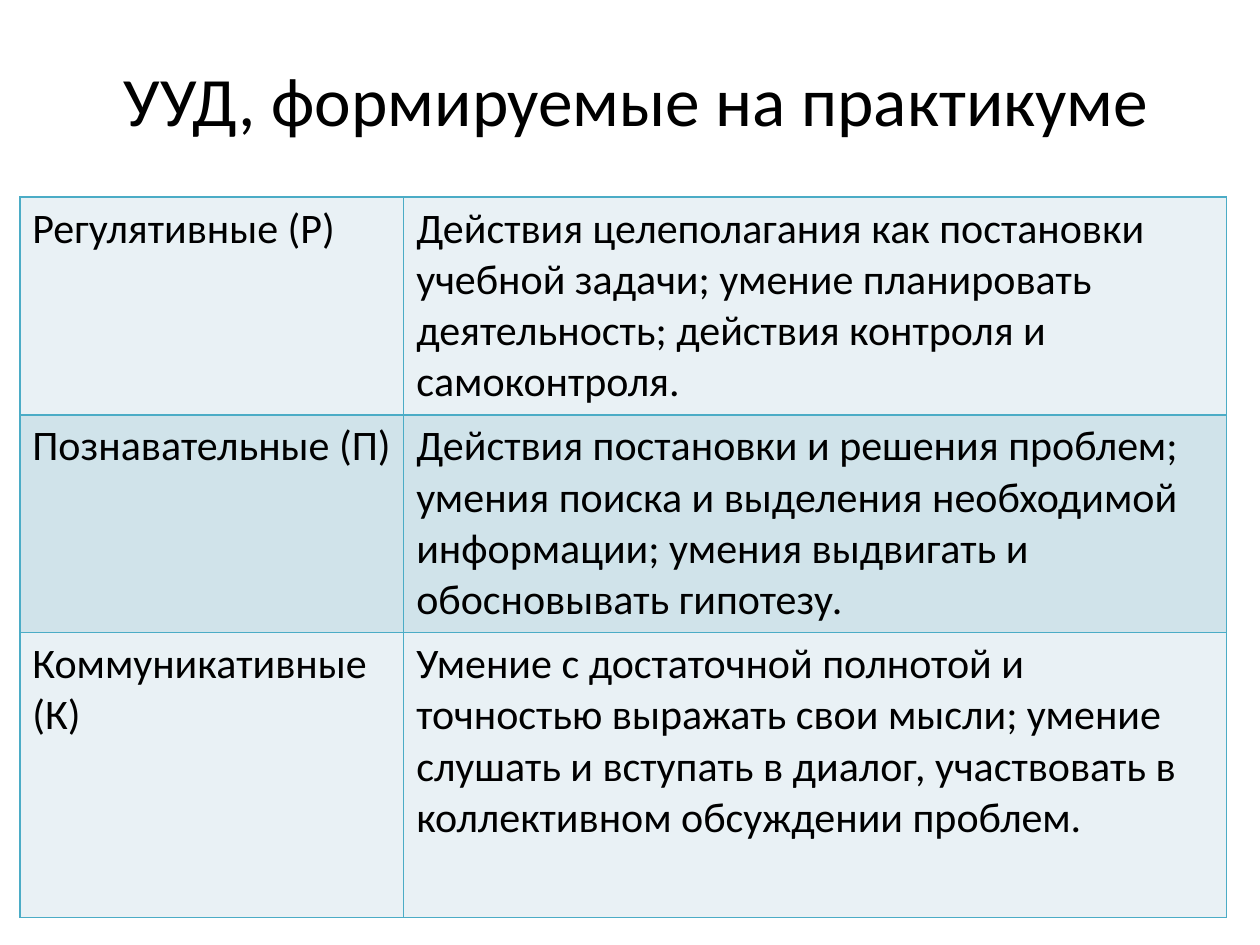
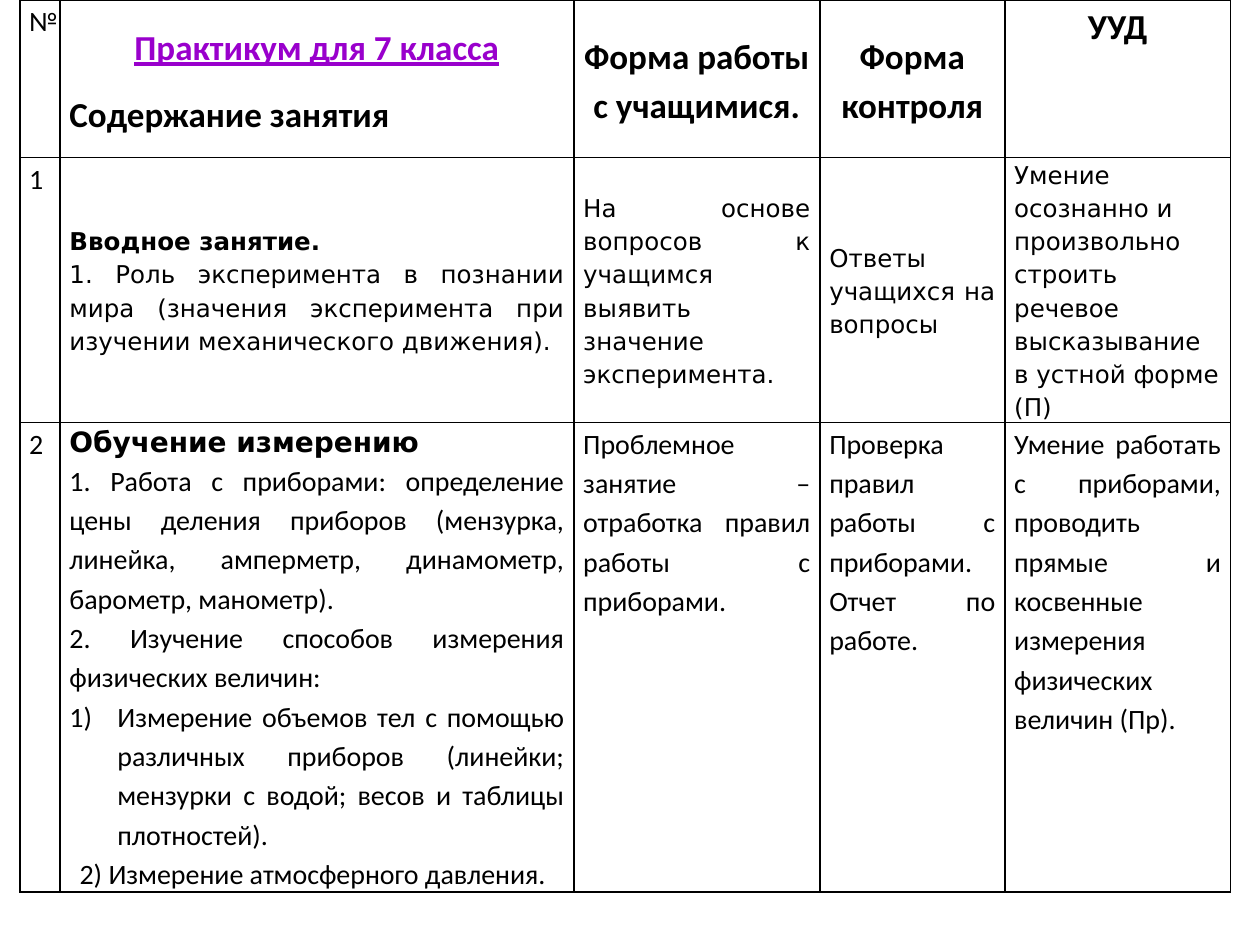
"""Two slides of tables on learning actions and a physics practicum."""
from dataclasses import dataclass

from lxml.etree import SubElement
from pptx import Presentation
from pptx.dml.color import RGBColor
from pptx.enum.text import MSO_ANCHOR as Anchor, PP_ALIGN as Align
from pptx.oxml.ns import qn
from pptx.util import Pt

BLACK = RGBColor(0x00, 0x00, 0x00)
PURPLE = RGBColor(0x99, 0x00, 0xCC)
TEAL = RGBColor(0x4B, 0xAC, 0xC6)
BANDS = (RGBColor(0xE9, 0xF1, 0xF5), RGBColor(0xD0, 0xE3, 0xEA))
SANS, WIDE = "Calibri", "DejaVu Sans"
TOP, MIDDLE = Anchor.TOP, Anchor.MIDDLE
LEFT, CENTER, JUSTIFY = Align.LEFT, Align.CENTER, Align.JUSTIFY


@dataclass
class Style:
    """Look of one paragraph."""
    size: float
    font: str = SANS
    bold: bool = False
    align: Align = JUSTIFY
    color: RGBColor = BLACK
    underline: bool = False
    spacing: float = 1.15
    after: float = 0
    indent: float = 0
    numbered: bool = False


TITLE = Style(39.6, align=CENTER, spacing=1)
ACTION = Style(24, align=LEFT, spacing=1)
SIGN = Style(16, align=LEFT, after=10)
HEAD = Style(20, bold=True, align=CENTER, after=10)
COURSE = Style(20, bold=True, align=CENTER, color=PURPLE, underline=True, after=10)
CONTENT = Style(20, bold=True, align=LEFT, after=10)
NUMBER = Style(16, align=LEFT)
TOPIC = Style(14, WIDE, bold=True)
INTRO = Style(14, WIDE)
INTRO_LEFT = Style(14, WIDE, align=LEFT)
MEASURING = Style(16, WIDE, bold=True)
BODY = Style(16)
LISTED = Style(16, indent=27.4, numbered=True)
INDENTED = Style(16, indent=5.8)

ACTIONS_TITLE = "УУД, формируемые на практикуме"
ACTIONS = [
    ("Регулятивные (Р)",
     "Действия целеполагания как постановки учебной задачи; умение планировать "
     "деятельность; действия контроля и самоконтроля."),
    ("Познавательные (П)",
     "Действия постановки и решения проблем; умения поиска и выделения необходимой "
     "информации; умения выдвигать и обосновывать гипотезу."),
    ("Коммуникативные (К)",
     "Умение с достаточной полнотой и точностью выражать свои мысли; умение слушать "
     "и вступать в диалог, участвовать в коллективном обсуждении проблем."),
]
LESSONS = [
    [(TOP, [("№", SIGN)]),
     (MIDDLE, [("Практикум для 7 класса", COURSE), ("Содержание занятия", CONTENT)]),
     (MIDDLE, [("Форма работы с учащимися.", HEAD)]),
     (MIDDLE, [("Форма контроля", HEAD)]),
     (TOP, [("УУД", HEAD)])],
    [(TOP, [("1", NUMBER)]),
     (MIDDLE, [("Вводное занятие.", TOPIC),
               ("1. Роль эксперимента в познании мира (значения эксперимента при "
                "изучении механического движения).", INTRO)]),
     (MIDDLE, [("На основе вопросов к учащимся выявить значение эксперимента.", INTRO)]),
     (MIDDLE, [("Ответы учащихся на вопросы", INTRO)]),
     (TOP, [("Умение осознанно и произвольно строить речевое высказывание в устной "
             "форме (П)", INTRO_LEFT)])],
    [(TOP, [("2", NUMBER)]),
     (TOP, [("Обучение измерению", MEASURING),
            ("1. Работа с приборами: определение цены деления приборов (мензурка, "
             "линейка, амперметр, динамометр, барометр, манометр).", BODY),
            ("2. Изучение способов измерения физических величин:", BODY),
            ("Измерение объемов тел с помощью различных приборов (линейки; мензурки "
             "с водой; весов и таблицы плотностей).", LISTED),
            ("2) Измерение атмосферного давления.", INDENTED)]),
     (TOP, [("Проблемное занятие – отработка правил работы с приборами.", BODY)]),
     (TOP, [("Проверка правил работы с приборами.", BODY), ("Отчет по работе.", BODY)]),
     (TOP, [("Умение работать с приборами, проводить прямые и косвенные измерения "
             "физических величин (Пр).", BODY)])],
]


def write(frame, paragraphs):
    """Fill a text frame with styled paragraphs."""
    frame.text = "\n".join(text for text, _ in paragraphs)
    for para, (_, style) in zip(frame.paragraphs, paragraphs):
        para.alignment = style.align
        para.line_spacing = style.spacing
        para.space_after = Pt(style.after)
        if style.indent:
            properties = para._p.get_or_add_pPr()
            properties.set("marL", str(Pt(style.indent)))
            properties.set("indent", str(-Pt(style.indent) if style.numbered else 0))
            if style.numbered:
                SubElement(properties, qn("a:buAutoNum"), type="arabicParenR")
        for span in para.runs:
            span.font.name = style.font
            span.font.size = Pt(style.size)
            span.font.bold = style.bold
            span.font.underline = style.underline
            span.font.color.rgb = style.color


def add_borders(cell, color):
    """Draw a one-point line on every side of a cell."""
    properties = cell._tc.get_or_add_tcPr()
    for side in ("lnL", "lnR", "lnT", "lnB"):
        line = SubElement(properties, qn(f"a:{side}"), w=str(Pt(1)))
        fill = SubElement(line, qn("a:solidFill"))
        SubElement(fill, qn("a:srgbClr"), val=str(color))


def add_grid(page, top, widths, heights, rows, border, bands=None, insets=None):
    """Add a bordered table whose cells are (anchor, paragraphs) pairs."""
    table = page.shapes.add_table(len(rows), len(widths), Pt(11.3), Pt(top),
                                  Pt(sum(widths)), Pt(sum(heights))).table
    table.first_row = table.horz_banding = False
    for column, width in zip(table.columns, widths):
        column.width = Pt(width)
    for index, (height, row) in enumerate(zip(heights, rows)):
        table.rows[index].height = Pt(height)
        for cell, (anchor, paragraphs) in zip(table.rows[index].cells, row):
            cell.vertical_anchor = anchor
            if insets:
                cell.margin_left = cell.margin_right = Pt(insets[0])
                cell.margin_top = cell.margin_bottom = Pt(insets[1])
            write(cell.text_frame, paragraphs)
            add_borders(cell, border)
            if bands:
                cell.fill.solid()
                cell.fill.fore_color.rgb = bands[index % len(bands)]
            else:
                cell.fill.background()


def add_actions(deck):
    """Add the slide listing the learning actions."""
    page = deck.slides.add_slide(deck.slide_layouts[5])
    title = page.shapes.title
    title.left, title.top, title.width, title.height = map(Pt, (39.6, 11.5, 648, 90))
    title.text_frame.vertical_anchor = MIDDLE
    write(title.text_frame, [(ACTIONS_TITLE, TITLE)])
    rows = [[(TOP, [(text, ACTION)]) for text in row] for row in ACTIONS]
    add_grid(page, 112.5, (219.4, 470.3), (124.5, 123.5, 163), rows, TEAL, bands=BANDS)


def add_lessons(deck):
    """Add the slide with the lesson plan."""
    page = deck.slides.add_slide(deck.slide_layouts[6])
    add_grid(page, 0, (23, 293.6, 140.6, 105.7, 129), (90, 133.2, 268), LESSONS, BLACK,
             insets=(5.4, 0))


def main():
    """Build and save the deck."""
    deck = Presentation()
    deck.slide_width, deck.slide_height = Pt(720), Pt(540)
    add_actions(deck)
    add_lessons(deck)
    deck.save("out.pptx")


if __name__ == "__main__":
    main()
